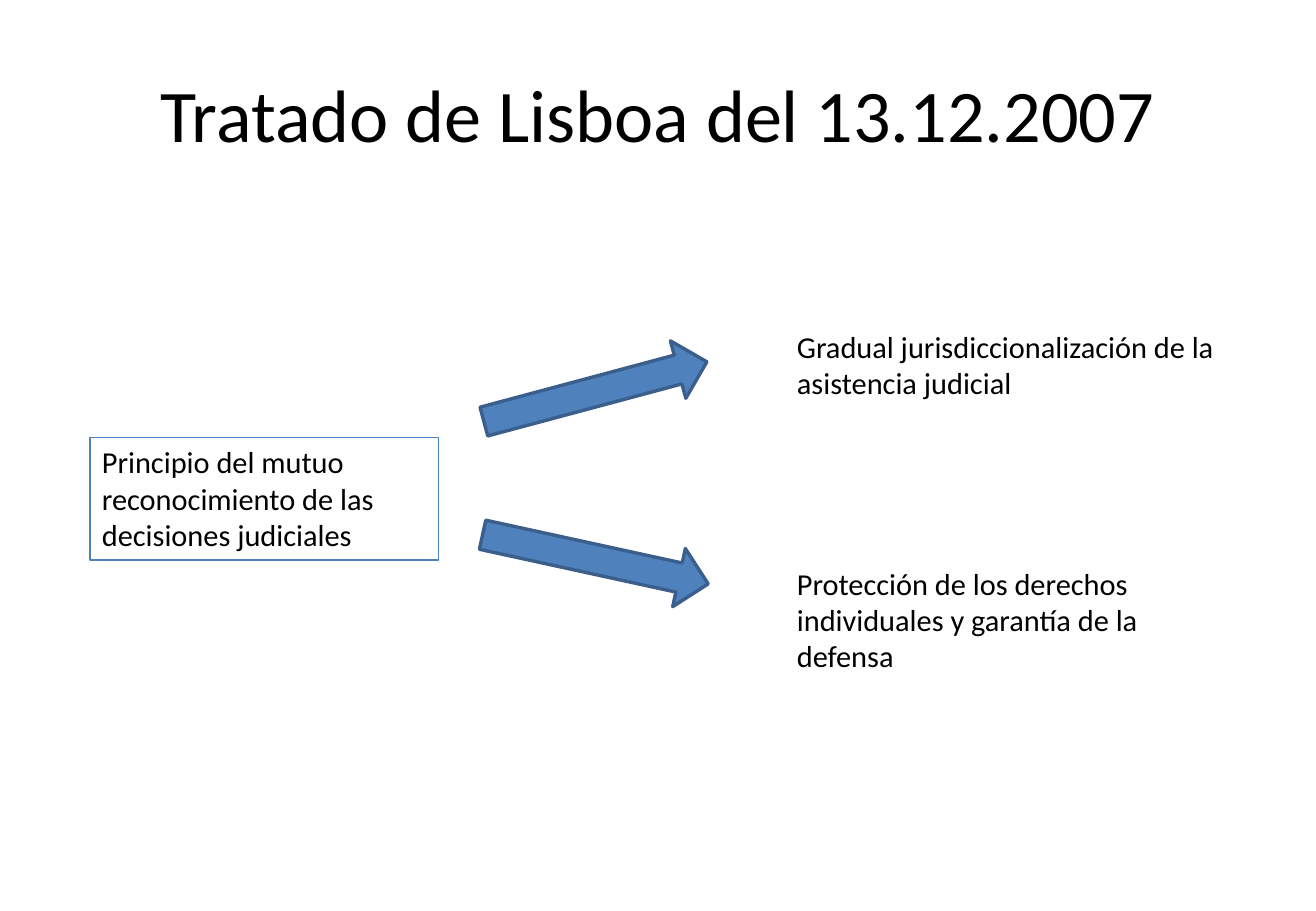
"""Build the slide on the Treaty of Lisbon and mutual recognition."""
from pptx import Presentation
from pptx.dml.color import RGBColor
from pptx.enum.shapes import MSO_SHAPE
from pptx.enum.text import MSO_ANCHOR, PP_ALIGN
from pptx.util import Inches, Pt

RIGHT_ARROW = MSO_SHAPE.RIGHT_ARROW
TOP, MIDDLE = MSO_ANCHOR.TOP, MSO_ANCHOR.MIDDLE
LEFT, CENTER = PP_ALIGN.LEFT, PP_ALIGN.CENTER


def color(hex_code):
    return RGBColor.from_string(hex_code)


class SlideBuilder:
    """Hold the style and the current slide."""

    font = "Calibri"
    ink = "000000"
    accent = "4F81BD"
    accent_dark = "3A5F8C"

    def __init__(self, slide):
        self.slide = slide

    def text(self, box, wording, size=18, align=LEFT, anchor=TOP):
        label = self.slide.shapes.add_textbox(*map(Inches, box))
        frame = label.text_frame
        frame.word_wrap = True
        frame.vertical_anchor = anchor
        paragraph = frame.paragraphs[0]
        paragraph.text = wording
        paragraph.alignment = align
        paragraph.font.name = self.font
        paragraph.font.size = Pt(size)
        paragraph.font.color.rgb = color(self.ink)
        return label

    def framed_text(self, box, wording):
        label = self.text(box, wording)
        label.line.color.rgb = color(self.accent)
        label.line.width = Pt(0.75)

    def arrow(self, box, rotation):
        arrow = self.slide.shapes.add_shape(RIGHT_ARROW, *map(Inches, box))
        arrow.rotation = rotation
        arrow.shadow.inherit = False
        arrow.fill.solid()
        arrow.fill.fore_color.rgb = color(self.accent)
        arrow.line.color.rgb = color(self.accent_dark)
        arrow.line.width = Pt(2)


def main():
    deck = Presentation()
    deck.slide_width, deck.slide_height = Inches(10.83), Inches(7.5)
    builder = SlideBuilder(deck.slides.add_slide(deck.slide_layouts[6]))

    builder.text((0.54, 0.3, 9.75, 1.25), "Tratado de Lisboa del 13.12.2007",
                 size=44, align=CENTER, anchor=MIDDLE)
    builder.framed_text(
        (0.74, 3.6, 2.87, 1.01),
        "Principio del mutuo reconocimiento de las decisiones judiciales")

    consequences = [
        (2.98, 345, 2.65, 0.71,
         "Gradual jurisdiccionalización de la asistencia judicial"),
        (4.36, 12.3, 4.6, 1.01,
         "Protección de los derechos individuales y garantía de la defensa"),
    ]
    for arrow_top, rotation, text_top, text_height, wording in consequences:
        builder.arrow((3.95, arrow_top, 1.9, 0.49), rotation)
        builder.text((6.46, text_top, 3.63, text_height), wording)

    deck.save("out.pptx")


if __name__ == "__main__":
    main()
